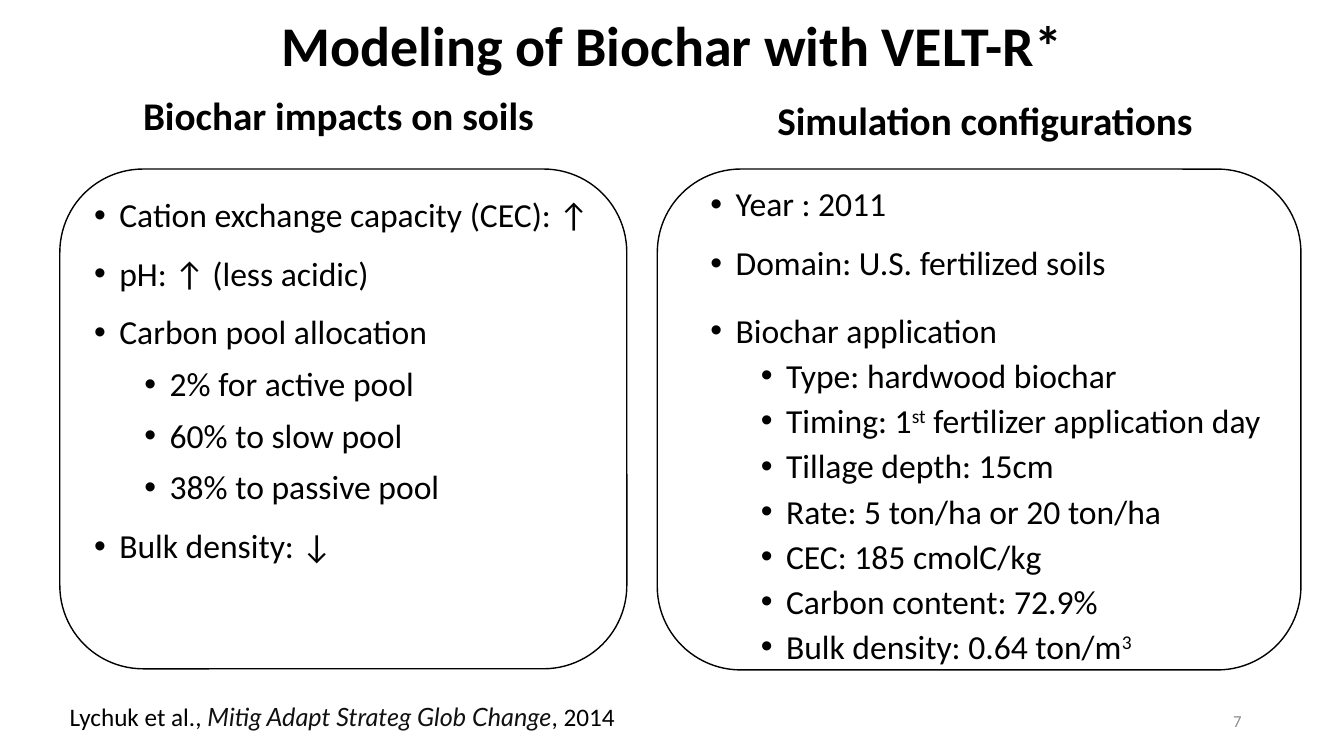
from lxml import etree
from pptx import Presentation
from pptx.dml.color import RGBColor
from pptx.enum.shapes import MSO_SHAPE
from pptx.enum.text import MSO_ANCHOR, MSO_AUTO_SIZE, PP_ALIGN
from pptx.oxml.ns import qn
from pptx.util import Emu, Pt

ROUNDED = MSO_SHAPE.ROUNDED_RECTANGLE
TOP, MIDDLE = MSO_ANCHOR.TOP, MSO_ANCHOR.MIDDLE
LEFT, CENTER, RIGHT = PP_ALIGN.LEFT, PP_ALIGN.CENTER, PP_ALIGN.RIGHT
FIXED, GROW = MSO_AUTO_SIZE.NONE, MSO_AUTO_SIZE.SHAPE_TO_FIT_TEXT
EMU_PER_PX = 9525
BLACK, WHITE, GREY, INK = "000000", "FFFFFF", "8C8C8C", "111111"


def px(length):
    return Emu(length * EMU_PER_PX)


def color(hex_code):
    return RGBColor.from_string(hex_code)


class SlideBuilder:
    font = "Calibri"
    list_size = 24

    def __init__(self, page):
        self.page = page

    def place(self, box, area):
        box.left, box.top, box.width, box.height = map(px, area)

    def add_span(self, para, text, size, hex_code=BLACK, bold=False,
                 italic=False, font=None, raised=False):
        span = para.add_run()
        span.text = text
        span.font.name = font or self.font
        span.font.size = Pt(size)
        span.font.bold, span.font.italic = bold, italic
        span.font.color.rgb = color(hex_code)
        if raised:
            span._r.get_or_add_rPr().set("baseline", "30000")

    def prepare(self, box, anchor=TOP, fit=FIXED):
        frame = box.text_frame
        frame.word_wrap = True
        frame.auto_size = fit
        frame.vertical_anchor = anchor
        return frame

    def title(self, text, area):
        box = self.page.shapes.title
        self.place(box, area)
        para = self.prepare(box, MIDDLE).paragraphs[0]
        para.alignment, para.line_spacing = CENTER, 0.9
        self.add_span(para, text, 40, bold=True)

    def label(self, spans, area, align=LEFT, anchor=TOP, fit=GROW):
        box = self.page.shapes.add_textbox(*map(px, area))
        para = self.prepare(box, anchor, fit).paragraphs[0]
        para.alignment = align
        for text, style in spans:
            self.add_span(para, text, **style)

    def panel(self, area, fill=None):
        box = self.page.shapes.add_shape(ROUNDED, *map(px, area))
        box.shadow.inherit = False
        if fill:
            box.fill.solid()
            box.fill.fore_color.rgb = color(fill)
        else:
            box.fill.background()
        box.line.color.rgb = color(BLACK)
        box.line.width = Pt(1)
        return box

    def bullets(self, box, items):
        """Each item: level, line spacing, space before, space after, texts.

        Every second text of an item is superscript.
        """
        frame = self.prepare(box)
        for index, (level, spacing, before, after, *texts) in enumerate(items):
            para = frame.add_paragraph() if index else frame.paragraphs[0]
            para.level, para.alignment = level, LEFT
            para.line_spacing = spacing
            para.space_before, para.space_after = Pt(before), Pt(after)
            props = para._p.get_or_add_pPr()
            props.set("marL", str(px(24 + 48 * level)))
            props.set("indent", str(px(-24)))
            etree.SubElement(props, qn("a:buFont")).set("typeface", "Arial")
            etree.SubElement(props, qn("a:buChar")).set("char", "•")
            for position, text in enumerate(texts):
                self.add_span(para, text, self.list_size, raised=position % 2 == 1)


# Line spacing, space before and space after of each kind of list item
MAIN = (0, 0.9, 10, 6)
SUB = (1, 0.9, 5, 6)
DENSE_MAIN = (0, 1.12, 10, 0)
DENSE_SUB = (1, 1.12, 0, 0)

SOIL_IMPACTS = [
    (*MAIN, "Cation exchange capacity (CEC): ↑"),
    (*MAIN, "pH: ↑ (less acidic)"),
    (*MAIN, "Carbon pool allocation"),
    (*SUB, "2% for active pool"),
    (*SUB, "60% to slow pool"),
    (*SUB, "38% to passive pool"),
    (*MAIN, "Bulk density: ↓"),
]
CONFIGURATIONS = [
    (*MAIN, "Year : 2011"),
    (*MAIN, "Domain: U.S. fertilized soils"),
    (*DENSE_MAIN, "Biochar application"),
    (*DENSE_SUB, "Type: hardwood biochar"),
    (*DENSE_SUB, "Timing: 1", "st", " fertilizer application day"),
    (*DENSE_SUB, "Tillage depth: 15cm"),
    (*DENSE_SUB, "Rate: 5 ton/ha or 20 ton/ha"),
    (*DENSE_SUB, "CEC: 185 cmolC/kg"),
    (*DENSE_SUB, "Carbon content: 72.9%"),
    (*DENSE_SUB, "Bulk density: 0.64 ton/m", "3"),
]
HEADINGS = [
    ("Biochar impacts on soils ", (88, 82, 477, 55)),
    ("Simulation configurations", (719, 87, 438, 55)),
]


def main():
    deck = Presentation()
    deck.slide_width, deck.slide_height = px(1280), px(720)
    page = deck.slides.add_slide(deck.slide_layouts[1])
    builder = SlideBuilder(page)

    # Title
    builder.title("Modeling of Biochar with VELT-R*", (0, 0, 1280, 92))

    # Simulation list in the body placeholder
    body = page.placeholders[1]
    builder.place(body, (667, 174, 613, 426))
    builder.bullets(body, CONFIGURATIONS)

    # Soil list inside its panel, and the outline around the simulation list
    builder.bullets(builder.panel((57, 161, 540, 476), WHITE), SOIL_IMPACTS)
    builder.panel((626, 161, 613, 477))

    # Column headings
    for text, area in HEADINGS:
        builder.label([(text, {"size": 28, "bold": True})], area, CENTER)

    # Citation and page number
    builder.label([
        ("Lychuk et al., ", {"size": 18}),
        ("Mitig Adapt Strateg Glob Change",
         {"size": 18, "hex_code": INK, "italic": True, "font": "Lato"}),
        (", 2014", {"size": 18}),
    ], (57, 663, 742, 38))
    builder.label([("7", {"size": 12, "hex_code": GREY})],
                  (904, 667, 288, 38), RIGHT, MIDDLE, FIXED)

    deck.save("out.pptx")


if __name__ == "__main__":
    main()
